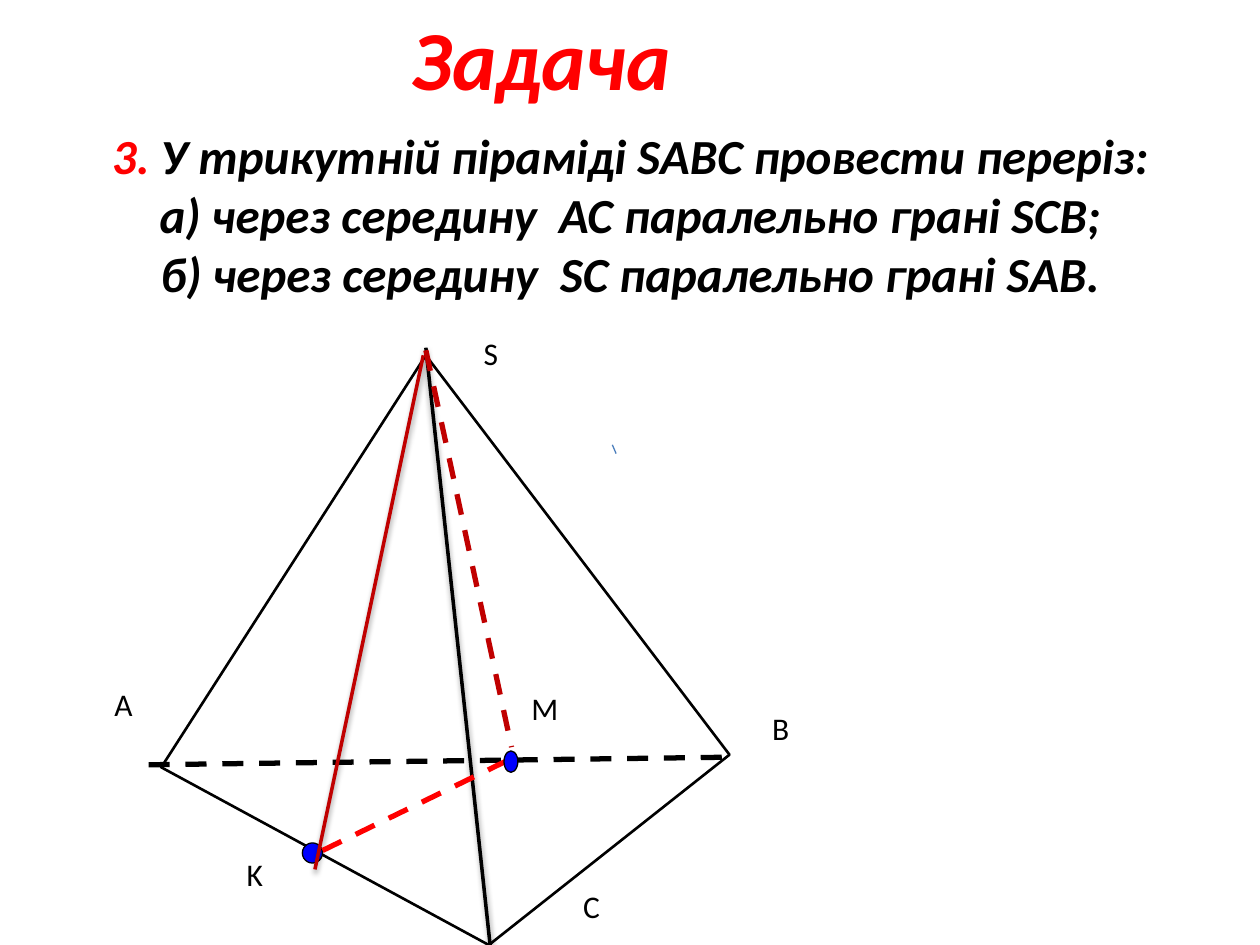
from typing import NamedTuple

from lxml import etree
from pptx import Presentation
from pptx import util as u
from pptx.dml.color import RGBColor
from pptx.enum import dml, shapes, text
from pptx.oxml import ns

BLACK = RGBColor(0, 0, 0)
RED = RGBColor(0xFF, 0, 0)
CRIMSON = RGBColor(0xC0, 0, 0)
BLUE = RGBColor(0, 0, 0xFF)
STEEL = RGBColor(0x4B, 0x7E, 0xBC)
FONT = "Calibri"


class Label(NamedTuple):
    name: str
    x: float
    y: float


class Edge(NamedTuple):
    start: tuple[float, float]
    end: tuple[float, float]
    color: RGBColor
    width: float = 3
    dash: bool = True


class Dot(NamedTuple):
    x: float
    y: float
    w: float
    h: float


def style(run, size: float, color: RGBColor, strong: bool = False) -> None:
    font = run.font
    font.name, font.size, font.color.rgb = FONT, u.Pt(size), color
    font.bold = font.italic = strong


def add_box(slide, x: float, y: float, w: float, h: float, wrap: bool = True):
    box = slide.shapes.add_textbox(*map(u.Inches, (x, y, w, h)))
    box.text_frame.word_wrap = wrap
    return box.text_frame


def add_label(slide, item: Label) -> None:
    frame = add_box(slide, item.x, item.y, 0.54, 0.51)
    frame.text = item.name
    style(frame.paragraphs[0].runs[0], 18, BLACK)


def add_edge(slide, edge: Edge) -> None:
    line = slide.shapes.add_connector(
        shapes.MSO_CONNECTOR.STRAIGHT, *map(u.Inches, edge.start + edge.end))
    line.line.color.rgb = edge.color
    line.line.width = u.Pt(edge.width)
    if edge.dash:
        line.line.dash_style = dml.MSO_LINE.DASH
    etree.SubElement(line._element.spPr, ns.qn("a:effectLst"))


def add_path(slide, points: list[tuple[float, float]], color: RGBColor,
             width: float, close: bool = False, shade: bool = False) -> None:
    spots = [(u.Inches(x), u.Inches(y)) for x, y in points]
    pen = slide.shapes.build_freeform(*spots[0])
    pen.add_line_segments(spots[1:], close=close)
    path = pen.convert_to_shape()
    path.fill.background()
    path.line.color.rgb = color
    path.line.width = u.Pt(width)
    path.shadow.inherit = False
    if shade:
        effects = path._element.spPr.find(ns.qn("a:effectLst"))
        cast = etree.SubElement(
            effects, ns.qn("a:outerShdw"), blurRad=str(u.Pt(3.1)),
            dist=str(u.Pt(1.6)), dir="5400000", rotWithShape="0")
        tint = etree.SubElement(cast, ns.qn("a:srgbClr"), val=str(BLACK))
        etree.SubElement(tint, ns.qn("a:alpha"), val="38000")


def add_dot(slide, dot: Dot) -> None:
    oval = slide.shapes.add_shape(shapes.MSO_SHAPE.OVAL, *map(u.Inches, dot))
    oval.shadow.inherit = False
    oval.fill.solid()
    oval.fill.fore_color.rgb = BLUE
    oval.line.color.rgb = BLACK
    oval.line.width = u.Pt(0.75)


def add_task(slide) -> None:
    frame = add_box(slide, 0, 0.95, 10, 1.5)
    frame.text = "\n".join([
        "3.",
        "а) через середину  АС паралельно грані SСВ;",
        "б) через середину  SС паралельно грані SАВ.",
    ])
    first = frame.paragraphs[0]
    first.add_run().text = " У трикутній піраміді SАВС провести переріз:"
    for para in frame.paragraphs:
        para.alignment = text.PP_ALIGN.CENTER
        props = para._p.get_or_add_pPr()
        props.set("marL", str(u.Inches(0.38)))
        props.set("indent", str(u.Inches(-0.38)))
        for run in para.runs:
            style(run, 28, BLACK, strong=True)
    first.runs[0].font.color.rgb = RED


def main() -> None:
    deck = Presentation()
    deck.slide_width, deck.slide_height = u.Inches(10), u.Inches(7.5)
    slide = deck.slides.add_slide(deck.slide_layouts[6])

    # Task and title
    add_task(slide)
    title = add_box(slide, 3.17, 0, 2.64, 0.91, wrap=False)
    title.text = "Задача"
    style(title.paragraphs[0].runs[0], 48, RED, strong=True)

    # Pyramid
    apex, a, b, c = (3.38, 2.82), (1.28, 6.09), (5.79, 5.99), (3.88, 7.5)
    add_path(slide, [c, b, apex, a], BLACK, 1.5, close=True)
    add_edge(slide, Edge((1.18, 6.07), (5.75, 6.01), BLACK))
    add_path(slide, [(3.38, 2.76), (3.89, 7.5)], BLACK, 2, shade=True)
    for item in (Label("S", 3.74, 2.6), Label("A", 0.81, 5.39),
                 Label("B", 6.03, 5.58), Label("C", 4.53, 6.99)):
        add_label(slide, item)
    add_edge(slide, Edge((4.89, 3.6), (4.86, 3.53), STEEL, 0.75, False))

    # Section SKM
    add_dot(slide, Dot(2.4, 6.69, 0.16, 0.16))
    add_label(slide, Label("K", 1.86, 6.74))
    add_path(slide, [(3.36, 2.82), (2.5, 6.9)], CRIMSON, 2, shade=True)
    add_edge(slide, Edge((2.56, 6.75), (4.08, 6.01), RED))
    add_edge(slide, Edge((3.38, 2.78), (4.06, 5.93), CRIMSON))
    add_label(slide, Label("M", 4.12, 5.42))
    add_dot(slide, Dot(4, 5.96, 0.11, 0.17))

    deck.save("out.pptx")


if __name__ == "__main__":
    main()
